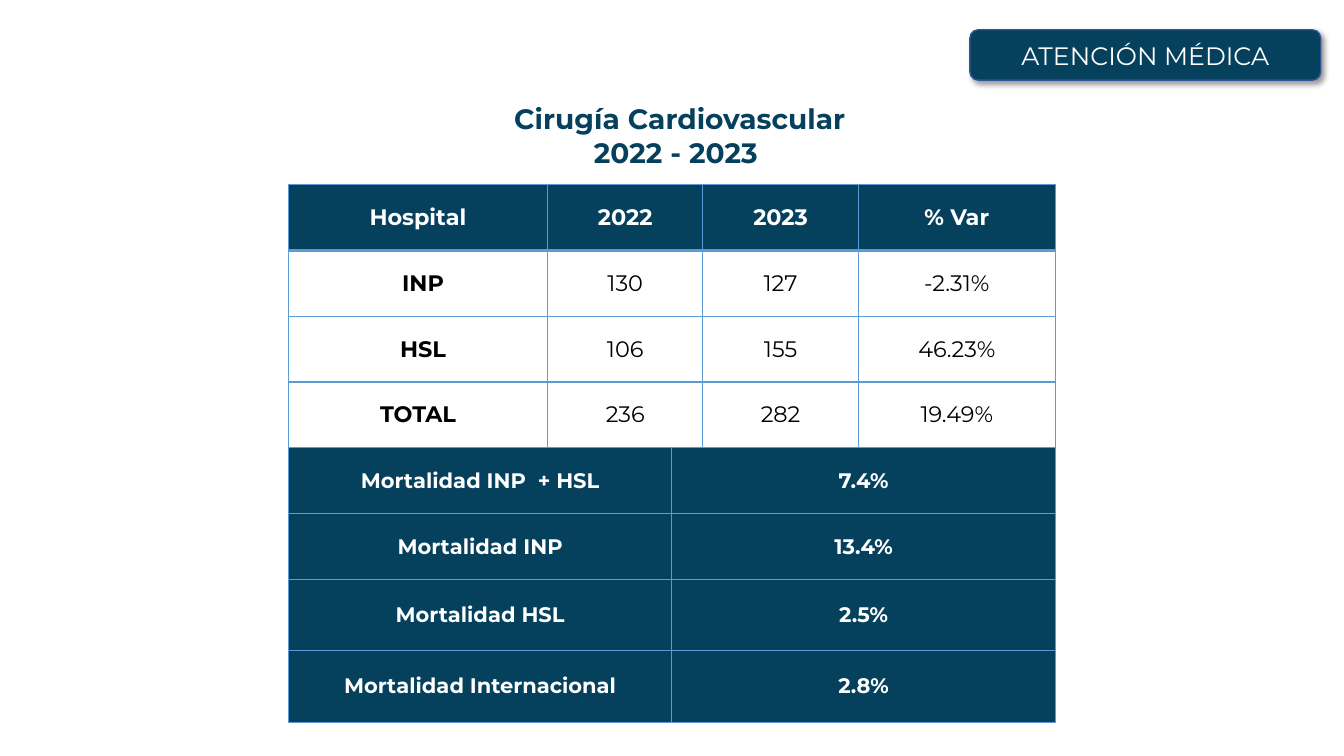
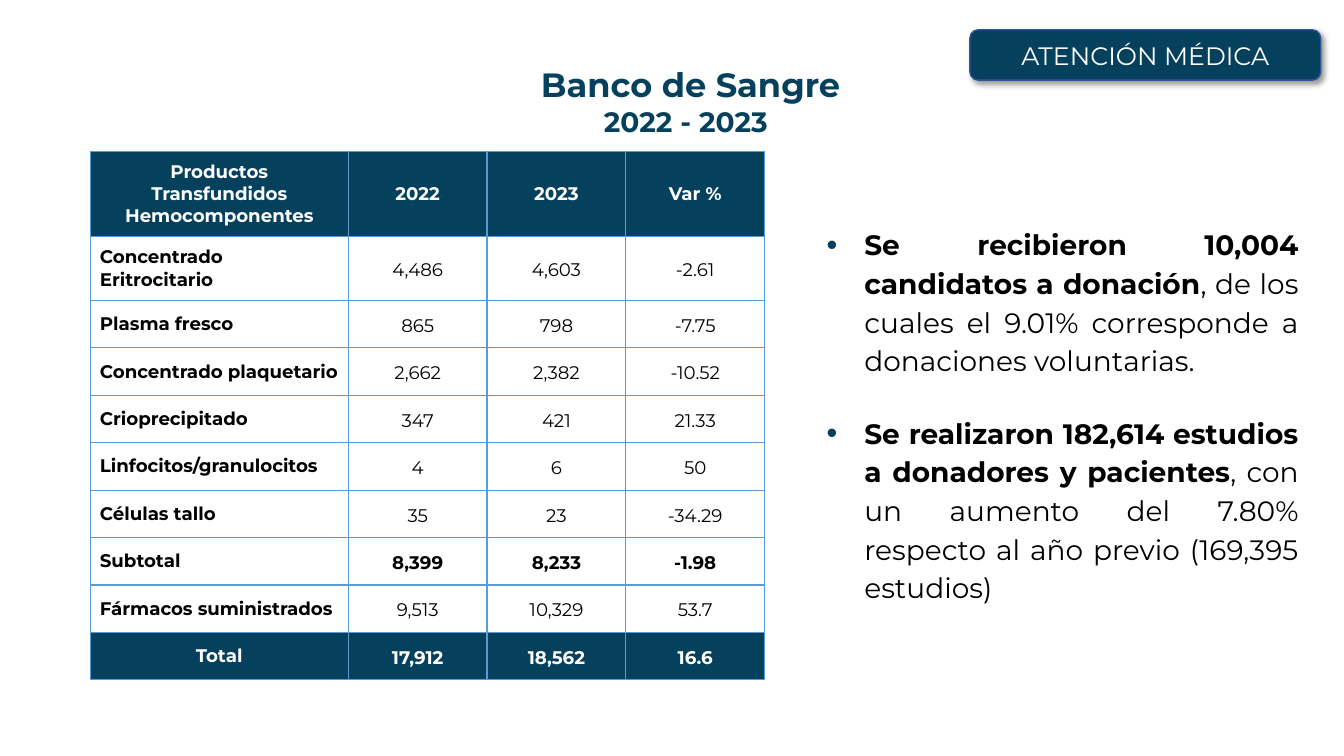
"""Build two hospital activity slides on cardiovascular surgery and the blood bank."""
from dataclasses import dataclass, replace
from typing import Optional

import lxml.etree
import pptx
import pptx.dml.color
import pptx.enum.shapes
import pptx.enum.text
import pptx.oxml.ns
import pptx.util

Pt = pptx.util.Pt
ALIGN = pptx.enum.text.PP_ALIGN
ANCHOR = pptx.enum.text.MSO_ANCHOR
FONT = "Montserrat"
COLORS = {
    "navy": "05405D",
    "white": "FFFFFF",
    "black": "000000",
    "grid": "5B9BD5",
    "badge_line": "2F5597",
}


@dataclass(frozen=True)
class Box:
    left: float
    top: float
    width: float
    height: float


@dataclass(frozen=True)
class TextRun:
    text: str
    size: float
    color: str = "navy"
    bold: bool = True


@dataclass(frozen=True)
class CellStyle:
    size: float
    bold: bool = True
    ink: str = "black"
    fill: str = "white"
    align: ALIGN = ALIGN.CENTER
    margin: float = 3.6
    side_margin: float = 7
    indent: float = 0
    line_spacing: float = 1
    bottom_line: float = 1


@dataclass(frozen=True)
class Cell:
    text: str
    style: CellStyle
    span: int = 1


def rgb(name: str) -> pptx.dml.color.RGBColor:
    return pptx.dml.color.RGBColor.from_string(COLORS[name])


def add_element(parent, tag: str, **attributes):
    element = lxml.etree.SubElement(parent, pptx.oxml.ns.qn(tag))
    for name, value in attributes.items():
        element.set(name, str(value))
    return element


def add_run(paragraph, content: TextRun) -> None:
    run = paragraph.add_run()
    run.text = content.text
    run.font.name = FONT
    run.font.size = Pt(content.size)
    run.font.bold = content.bold
    run.font.color.rgb = rgb(content.color)


def place(shape, box: Box) -> None:
    shape.left, shape.top = Pt(box.left), Pt(box.top)
    shape.width, shape.height = Pt(box.width), Pt(box.height)


def paragraph_at(text_frame, index: int):
    return text_frame.add_paragraph() if index else text_frame.paragraphs[0]


def prepare_frame(shape, anchor: ANCHOR):
    text_frame = shape.text_frame
    text_frame.word_wrap = True
    text_frame.auto_size = pptx.enum.text.MSO_AUTO_SIZE.NONE
    text_frame.vertical_anchor = anchor
    return text_frame


def write_title(slide, box: Box, lines: list[TextRun], anchor: ANCHOR) -> None:
    title = slide.shapes.title
    place(title, box)
    text_frame = prepare_frame(title, anchor)
    for index, line in enumerate(lines):
        paragraph = paragraph_at(text_frame, index)
        paragraph.alignment = ALIGN.CENTER
        add_run(paragraph, line)


def write_bullets(slide, box: Box, items: list[list[TextRun]]) -> None:
    body = slide.placeholders[1]
    place(body, box)
    text_frame = prepare_frame(body, ANCHOR.TOP)
    for index, item in enumerate(items):
        paragraph = paragraph_at(text_frame, index)
        properties = paragraph._p.get_or_add_pPr()
        properties.set("marL", str(Pt(27)))
        properties.set("indent", str(-Pt(27)))
        bullet_color = add_element(properties, "a:buClr")
        add_element(bullet_color, "a:srgbClr", val=COLORS["navy"])
        add_element(properties, "a:buSzPct", val=110000)
        add_element(properties, "a:buFont", typeface="Arial")
        add_element(properties, "a:buChar", char="•")
        paragraph.alignment = ALIGN.JUSTIFY
        paragraph.line_spacing = 1.15
        paragraph.space_before = Pt(12 if index else 0)
        paragraph.space_after = Pt(12)
        for content in item:
            add_run(paragraph, content)


def add_badge(slide) -> None:
    badge = slide.shapes.add_shape(
        pptx.enum.shapes.MSO_SHAPE.ROUNDED_RECTANGLE, Pt(692.8), Pt(21.3), Pt(250.6), Pt(36))
    badge.fill.solid()
    badge.fill.fore_color.rgb = rgb("navy")
    badge.line.color.rgb = rgb("badge_line")
    badge.line.width = Pt(1)
    badge.shadow.inherit = False
    effects = badge._element.spPr.find(pptx.oxml.ns.qn("a:effectLst"))
    shadow = add_element(effects, "a:outerShdw", blurRad=Pt(4), dist=Pt(3),
                         dir=45 * 60000, algn="tl", rotWithShape=0)
    shadow_color = add_element(shadow, "a:srgbClr", val=COLORS["black"])
    add_element(shadow_color, "a:alpha", val=40000)
    paragraph = prepare_frame(badge, ANCHOR.MIDDLE).paragraphs[0]
    paragraph.alignment = ALIGN.CENTER
    add_run(paragraph, TextRun("ATENCIÓN MÉDICA", 18, "white", False))


def format_cell(cell, style: CellStyle) -> None:
    properties = cell._tc.get_or_add_tcPr()
    for side in ("L", "R", "T", "B"):
        width = style.bottom_line if side == "B" else 1
        border = add_element(properties, f"a:ln{side}", w=Pt(width))
        border_fill = add_element(border, "a:solidFill")
        add_element(border_fill, "a:srgbClr", val=COLORS["grid"])
    cell.fill.solid()
    cell.fill.fore_color.rgb = rgb(style.fill)
    cell.vertical_anchor = ANCHOR.MIDDLE
    cell.margin_top = cell.margin_bottom = Pt(style.margin)
    cell.margin_left = cell.margin_right = Pt(style.side_margin)


def write_cell(cell, content: Cell) -> None:
    style = content.style
    paragraph = cell.text_frame.paragraphs[0]
    paragraph._p.get_or_add_pPr().set("marL", str(Pt(style.indent)))
    paragraph.alignment = style.align
    paragraph.line_spacing = style.line_spacing
    add_run(paragraph, TextRun(content.text, style.size, style.ink, style.bold))


def add_data_table(slide, left: float, top: float, widths: list[float],
                   heights: list[float], rows: list[list[Cell]]) -> None:
    table = slide.shapes.add_table(
        len(heights), len(widths), Pt(left), Pt(top), Pt(sum(widths)), Pt(sum(heights))).table
    table.first_row = table.horz_banding = False
    for column, width in zip(table.columns, widths):
        column.width = Pt(width)
    for row_index, (height, row) in enumerate(zip(heights, rows)):
        table.rows[row_index].height = Pt(height)
        column_index = 0
        for content in row:
            end = column_index + content.span
            for index in range(column_index, end):
                format_cell(table.cell(row_index, index), content.style)
            cell = table.cell(row_index, column_index)
            if content.span > 1:
                cell.merge(table.cell(row_index, end - 1))
            write_cell(cell, content)
            column_index = end


def styled_row(texts: tuple[str, ...], label: CellStyle, value: CellStyle,
               spans: Optional[tuple[int, ...]] = None) -> list[Cell]:
    styles = [label] + [value] * (len(texts) - 1)
    return [Cell(*parts) for parts in zip(texts, styles, spans or (1,) * len(texts))]


def build_surgery_slide(presentation) -> None:
    slide = presentation.slides.add_slide(presentation.slide_layouts[5])
    write_title(slide, Box(245.5, 69.1, 480.2, 55.4),
                [TextRun("Cirugía Cardiovascular", 20), TextRun("2022 - 2023 ", 20)], ANCHOR.TOP)
    label = CellStyle(16)
    indented = replace(label, indent=7.2)
    value = replace(label, bold=False)
    header = replace(label, ink="white", fill="navy", bottom_line=2)
    mortality = replace(header, size=15, bottom_line=1)
    counts = (1, 2, 1, 1)
    rows = [
        styled_row(("Hospital", "2022", "2023", "% Var"), header, header, counts),
        styled_row(("INP", "130", "127", "-2.31%"), indented, value, counts),
        styled_row(("HSL", "106", "155", "46.23%"), indented, value, counts),
        styled_row(("TOTAL", "236", "282", "19.49%"), label, value, counts),
    ]
    rates = [("Mortalidad INP  + HSL", "7.4%"), ("Mortalidad INP", "13.4%"),
             ("Mortalidad HSL", "2.5%"), ("Mortalidad Internacional", "2.8%")]
    rows += [styled_row(rate, mortality, mortality, (2, 3)) for rate in rates]
    add_data_table(slide, 206.1, 131.8, [185, 88.8, 22.2, 111, 140.8],
                   [47] * 6 + [51] * 2, rows)
    add_badge(slide)


def build_blood_bank_slide(presentation) -> None:
    slide = presentation.slides.add_slide(presentation.slide_layouts[1])
    write_title(slide, Box(199.4, 42.5, 581, 59.8),
                [TextRun(" Banco de Sangre", 24), TextRun(" 2022 - 2023 ", 20)], ANCHOR.MIDDLE)
    write_bullets(slide, Box(583.2, 155.6, 351.6, 294.5), [
        [TextRun("Se recibieron 10,004 candidatos a donación", 20, "black"),
         TextRun(", de los cuales el 9.01% corresponde a donaciones voluntarias.",
                 20, "black", False)],
        [TextRun("Se realizaron 182,614 estudios a donadores y pacientes", 20, "black"),
         TextRun(", con un aumento del 7.80% respecto al año previo (169,395 estudios)",
                 20, "black", False)],
    ])
    label = CellStyle(13, align=ALIGN.LEFT, margin=6.5)
    header = replace(label, ink="white", fill="navy", align=ALIGN.CENTER, side_margin=10)
    subtotal = replace(label, align=ALIGN.CENTER, line_spacing=1.15)
    value = replace(subtotal, bold=False)
    total = replace(header, line_spacing=1.15)
    products = [
        ("Concentrado Eritrocitario", "4,486", "4,603", "-2.61"),
        ("Plasma fresco", "865", "798", "-7.75"),
        ("Concentrado plaquetario", "2,662", "2,382", "-10.52"),
        ("Crioprecipitado", "347", "421", "21.33"),
        ("Linfocitos/granulocitos", "4", "6", "50"),
        ("Células tallo", "35", "23", "-34.29"),
        ("Subtotal", "8,399", "8,233", "-1.98"),
        ("Fármacos suministrados", "9,513", "10,329", "53.7"),
    ]
    rows = [styled_row(("Productos Transfundidos Hemocomponentes", "2022", "2023", "Var %"),
                       header, header)]
    rows += [styled_row(product, label, subtotal if product[0] == "Subtotal" else value)
             for product in products]
    rows.append(styled_row(("Total", "17,912", "18,562", "16.6"), header, total))
    add_data_table(slide, 64.4, 108.1, [184.4] + [99.1] * 3,
                   [60.7, 45.8] + [33.9] * 8, rows)
    add_badge(slide)


def main() -> None:
    presentation = pptx.Presentation()
    presentation.slide_width = Pt(960)
    presentation.slide_height = Pt(540)
    build_surgery_slide(presentation)
    build_blood_bank_slide(presentation)
    presentation.save("out.pptx")


if __name__ == "__main__":
    main()
